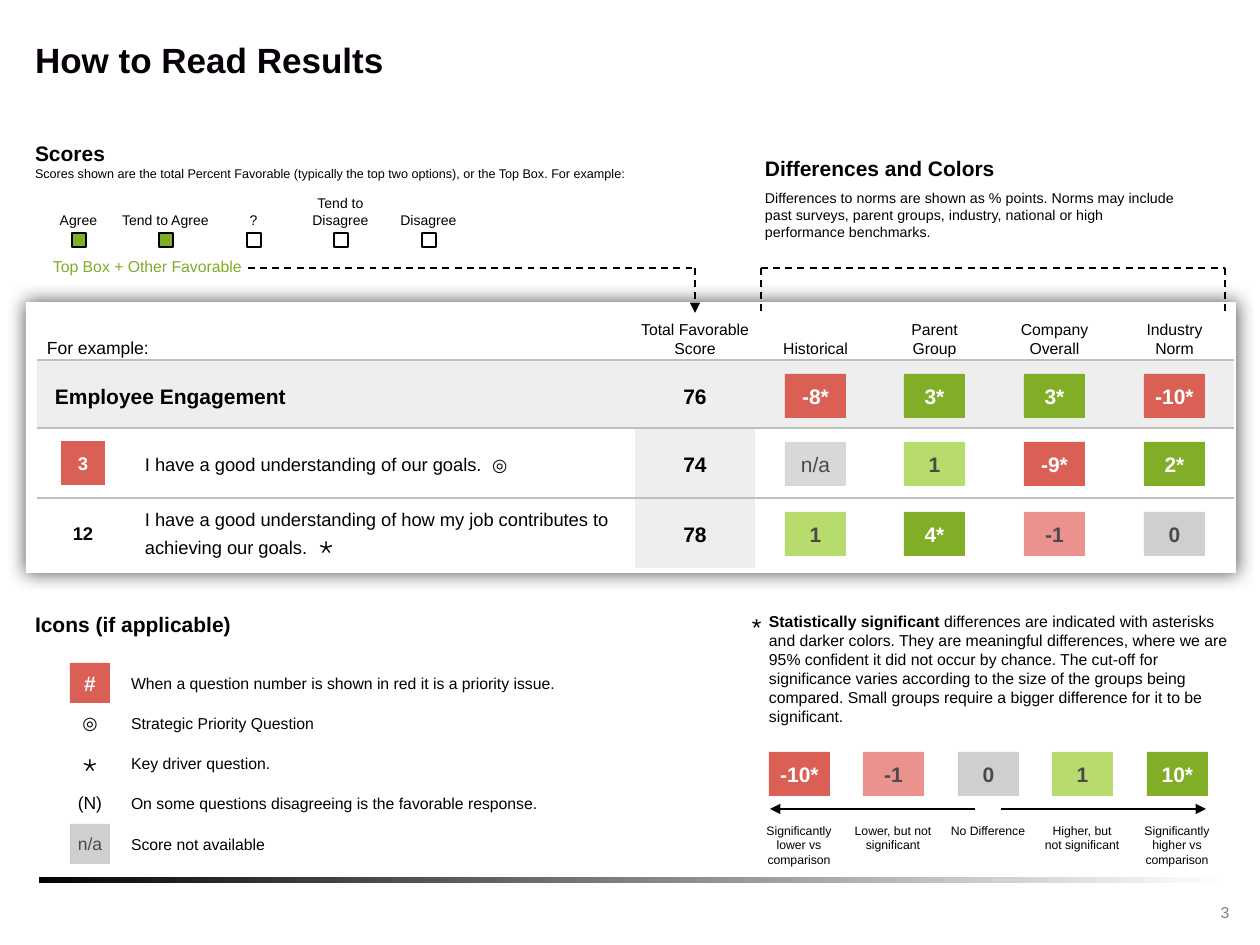
"""Build the "How to Read Results" slide of a survey report."""
from lxml.etree import SubElement
from pptx import Presentation
from pptx.dml.color import RGBColor
from pptx.enum.dml import MSO_LINE
from pptx.enum.shapes import MSO_CONNECTOR, MSO_SHAPE
from pptx.enum.text import MSO_ANCHOR, PP_ALIGN
from pptx.oxml.ns import qn
from pptx.util import Pt

SCALE = 914400 / 126
BLACK = RGBColor(0x00, 0x00, 0x00)
INK = RGBColor(0x08, 0x00, 0x09)
WHITE = RGBColor(0xFF, 0xFF, 0xFF)
CHARCOAL = RGBColor(0x4A, 0x4A, 0x4A)
NUMBER_GRAY = RGBColor(0x7F, 0x7F, 0x7F)
RULE_GRAY = RGBColor(0xBF, 0xBF, 0xBF)
BAND = RGBColor(0xEE, 0xEE, 0xEE)
NEUTRAL = RGBColor(0xCF, 0xCF, 0xCF)
MISSING = RGBColor(0xD8, 0xD8, 0xD8)
RED = RGBColor(0xDA, 0x60, 0x56)
PINK = RGBColor(0xE9, 0x92, 0x8E)
GREEN = RGBColor(0x81, 0xAD, 0x27)
LIME = RGBColor(0xB7, 0xDB, 0x6C)

LEFT, CENTER = PP_ALIGN.LEFT, PP_ALIGN.CENTER
TOP, MIDDLE, BOTTOM = MSO_ANCHOR.TOP, MSO_ANCHOR.MIDDLE, MSO_ANCHOR.BOTTOM

HEADERS = ["Historical", "Parent Group", "Company Overall", "Industry Norm"]
ROWS = [
    (360, 68, "76", [("-8*", RED), ("3*", GREEN), ("3*", GREEN), ("-10*", RED)]),
    (428, 70, "74", [("n/a", MISSING), ("1", LIME), ("-9*", RED), ("2*", GREEN)]),
    (498, 70, "78", [("1", LIME), ("4*", GREEN), ("-1", PINK), ("0", NEUTRAL)]),
]
QUESTIONS = [
    (428, "3", RED, "I have a good understanding of our goals. ", " ◎", 10),
    (498, "12", None, "I have a good understanding of how my job contributes "
     "to achieving our goals. ", " ⋆", 14),
]
OPTIONS = [("Agree", GREEN), ("Tend to Agree", GREEN), ("?", WHITE),
           ("Tend to Disagree", WHITE), ("Disagree", WHITE)]
ICONS = [
    ("#", 12, RED, WHITE, "When a question number is shown in red it is a priority issue."),
    ("◎", 10, None, BLACK, "Strategic Priority Question"),
    ("⋆", 14, None, BLACK, "Key driver question."),
    ("(N)", 10, None, BLACK, "On some questions disagreeing is the favorable response."),
    ("n/a", 10, NEUTRAL, CHARCOAL, "Score not available"),
]
LEGEND = [
    ("-10*", RED, "Significantly lower vs comparison"),
    ("-1", PINK, "Lower, but not significant"),
    ("0", NEUTRAL, "No Difference"),
    ("1", LIME, "Higher, but not significant"),
    ("10*", GREEN, "Significantly higher vs comparison"),
]


def px(*values):
    """Turn pixel lengths into EMU."""
    return [round(v * SCALE) for v in values]


def write(sp, runs, align=LEFT, anchor=TOP, wrap=True):
    """Fill a shape with one paragraph of (text, size, color, bold) runs."""
    tf = sp.text_frame
    frame = dict(margin_left=0, margin_right=0, margin_top=0, margin_bottom=0,
                 word_wrap=wrap, vertical_anchor=anchor)
    for name, value in frame.items():
        setattr(tf, name, value)
    p = tf.paragraphs[0]
    p.alignment = align
    for text, size, color, bold in runs:
        r = p.add_run()
        r.text = text
        for name, value in dict(name="Arial", size=Pt(size), bold=bold).items():
            setattr(r.font, name, value)
        r.font.color.rgb = color


def add_rich_text(s, box, runs, align=LEFT, anchor=TOP):
    """Add a text box holding several runs."""
    write(s.shapes.add_textbox(*px(*box)), runs, align, anchor)


def add_text(s, box, text, size, color=BLACK, bold=False, align=LEFT, anchor=TOP):
    """Add a text box holding one run."""
    add_rich_text(s, box, [(text, size, color, bold)], align, anchor)


def add_rect(s, box, fill=None, outlined=False):
    """Add a flat rectangle."""
    sp = s.shapes.add_shape(MSO_SHAPE.RECTANGLE, *px(*box))
    sp.shadow.inherit = False
    if fill is not None:
        sp.fill.solid()
        sp.fill.fore_color.rgb = fill
    if outlined:
        sp.line.color.rgb = BLACK
        sp.line.width = Pt(0)
    else:
        sp.line.fill.background()
    return sp


def add_chip(s, x, y, text, fill):
    """Add a colored score chip."""
    color = WHITE if fill in (RED, GREEN) else CHARCOAL
    sp = add_rect(s, (x, y, 61, 44), fill)
    write(sp, [(text, 12, color, fill != MISSING)], CENTER, MIDDLE, False)


def add_badge(s, box, text, size, fill, color, bold):
    """Add a centred symbol, on a square when a fill is given."""
    if fill is not None:
        add_rect(s, box, fill)
    add_text(s, box, text, size, color, bold, CENTER, MIDDLE)


def add_line(s, ends, width=1, color=BLACK, dashed=False, arrow=None):
    """Add a straight line with an optional arrowhead."""
    sp = s.shapes.add_connector(MSO_CONNECTOR.STRAIGHT, *px(*ends))
    sp.line.color.rgb = color
    sp.line.width = Pt(width)
    if dashed:
        sp.line.dash_style = MSO_LINE.DASH
    if arrow:
        SubElement(sp.line._get_or_add_ln(), qn(f"a:{arrow}"), type="triangle")
    SubElement(sp._element.spPr, qn("a:effectLst"))


def add_panel(s):
    """Add the white table panel with its soft shadow."""
    sp = add_rect(s, (26, 302, 1210, 271), WHITE)
    effects = sp._element.spPr.find(qn("a:effectLst"))
    shadow = SubElement(effects, qn("a:outerShdw"), blurRad=str(Pt(10)), dist="0",
                        dir="0", algn="ctr", rotWithShape="0")
    color = SubElement(shadow, qn("a:srgbClr"), val="000000")
    SubElement(color, qn("a:alpha"), val="66000")


def add_footer(s):
    """Add the gradient bar and the slide number."""
    sp = add_rect(s, (39, 877, 1187, 6))
    sp.fill.gradient()
    sp.fill.gradient_angle = 0
    for stop, color in zip(sp.fill.gradient_stops, (INK, WHITE)):
        stop.color.rgb = color
    add_text(s, (1192, 897, 66, 31), "3", 9, NUMBER_GRAY, align=CENTER, anchor=MIDDLE)


def add_scores(s):
    """Add the explanation of the scores."""
    add_text(s, (35, 141, 685, 24), "Scores", 12, bold=True)
    add_text(s, (35, 166, 685, 18), "Scores shown are the total Percent Favorable (typically "
             "the top two options), or the Top Box. For example:", 7.2)
    for i, (label, fill) in enumerate(OPTIONS):
        x = 35 + 175 * i // 2
        add_text(s, (x, 193, 87, 35), label, 8, align=CENTER, anchor=BOTTOM)
        add_rect(s, (x + 37, 233, 14, 14), fill, True)
    add_text(s, (53, 257, 193, 25), "Top Box + Other Favorable", 9, GREEN)


def add_differences(s):
    """Add the explanation of the differences."""
    add_text(s, (765, 156, 442, 24), "Differences and Colors", 12, bold=True)
    add_text(s, (765, 189, 416, 53), "Differences to norms are shown as % points. Norms may "
             "include past surveys, parent groups, industry, national or high performance "
             "benchmarks.", 8.1)


def add_guides(s):
    """Add the dashed guides that lead into the table."""
    add_line(s, (248, 268, 695, 268), dashed=True)
    add_line(s, (695, 268, 695, 313), dashed=True, arrow="tailEnd")
    add_line(s, (761, 268, 1225, 268), dashed=True)
    for x in (761, 1225):
        add_line(s, (x, 268, x, 311), dashed=True)


def add_results(s):
    """Add the example results grid."""
    add_text(s, (47, 314, 580, 44), "For example:", 10, anchor=BOTTOM)
    add_text(s, (635, 314, 120, 44), "Total Favorable Score", 9, align=CENTER, anchor=BOTTOM)
    columns = [785 + 359 * i // 3 for i in range(len(HEADERS))]
    for x, label in zip(columns, HEADERS):
        add_text(s, (x - 12, 314, 85, 44), label, 9, align=CENTER, anchor=BOTTOM)
    add_rect(s, (37, 360, 1197, 68), BAND)
    for y, height, score, chips in ROWS:
        add_rect(s, (635, y, 120, height), BAND)
        add_line(s, (37, y, 1234, y), 1.5 if y == 360 else 0.75, RULE_GRAY)
        add_text(s, (635, y + 14, 120, 44), score, 12, bold=True, align=CENTER, anchor=MIDDLE)
        for x, chip in zip(columns, chips):
            add_chip(s, x, y + 14, *chip)
    add_text(s, (55, 365, 580, 62), "Employee Engagement", 12, bold=True, anchor=MIDDLE)
    for y, number, fill, question, icon, size in QUESTIONS:
        color = BLACK if fill is None else WHITE
        add_badge(s, (61, y + 13, 44, 44), number, 10.5, fill, color, True)
        runs = [(question, 10.5, BLACK, False), (icon, size, BLACK, False)]
        add_rich_text(s, (145, y + 5, 479, 62), runs, anchor=MIDDLE)


def add_icons(s):
    """Add the key to the icons."""
    add_text(s, (35, 612, 685, 24), "Icons (if applicable)", 12, bold=True)
    for i, (symbol, size, fill, color, meaning) in enumerate(ICONS):
        y = 663 + 161 * i // 4
        add_badge(s, (70, y, 40, 40), symbol, size, fill, color, symbol == "#")
        add_text(s, (131, y + 1, 437, 39), meaning, 9, anchor=MIDDLE)


def add_significance(s):
    """Add the note on significance and its color legend."""
    add_text(s, (752, 612, 10, 29), "*", 14)
    add_rich_text(s, (769, 612, 461, 122), [
        ("Statistically significant", 9, BLACK, True),
        (" differences are indicated with asterisks and darker colors. They are meaningful "
         "differences, where we are 95% confident it did not occur by chance. The cut-off for "
         "significance varies according to the size of the groups being compared. Small groups "
         "require a bigger difference for it to be significant.", 9, BLACK, False)])
    for i, (value, fill, label) in enumerate(LEGEND):
        x = 769 + 189 * i // 2
        add_chip(s, x, 752, value, fill)
        add_text(s, (x - 9, 823, 78, 44), label, 7, align=CENTER)
    add_line(s, (770, 809, 975, 809), arrow="headEnd")
    add_line(s, (1001, 809, 1206, 809), arrow="tailEnd")


def main():
    """Build and save the slide."""
    prs = Presentation()
    prs.slide_width, prs.slide_height = px(1260, 945)
    s = prs.slides.add_slide(prs.slide_layouts[6])
    add_footer(s)
    add_text(s, (35, 35, 1189, 48), "How to Read Results", 20, INK, True, anchor=MIDDLE)
    add_panel(s)
    for add_part in (add_scores, add_differences, add_guides, add_results,
                     add_icons, add_significance):
        add_part(s)
    prs.save("out.pptx")


if __name__ == "__main__":
    main()
